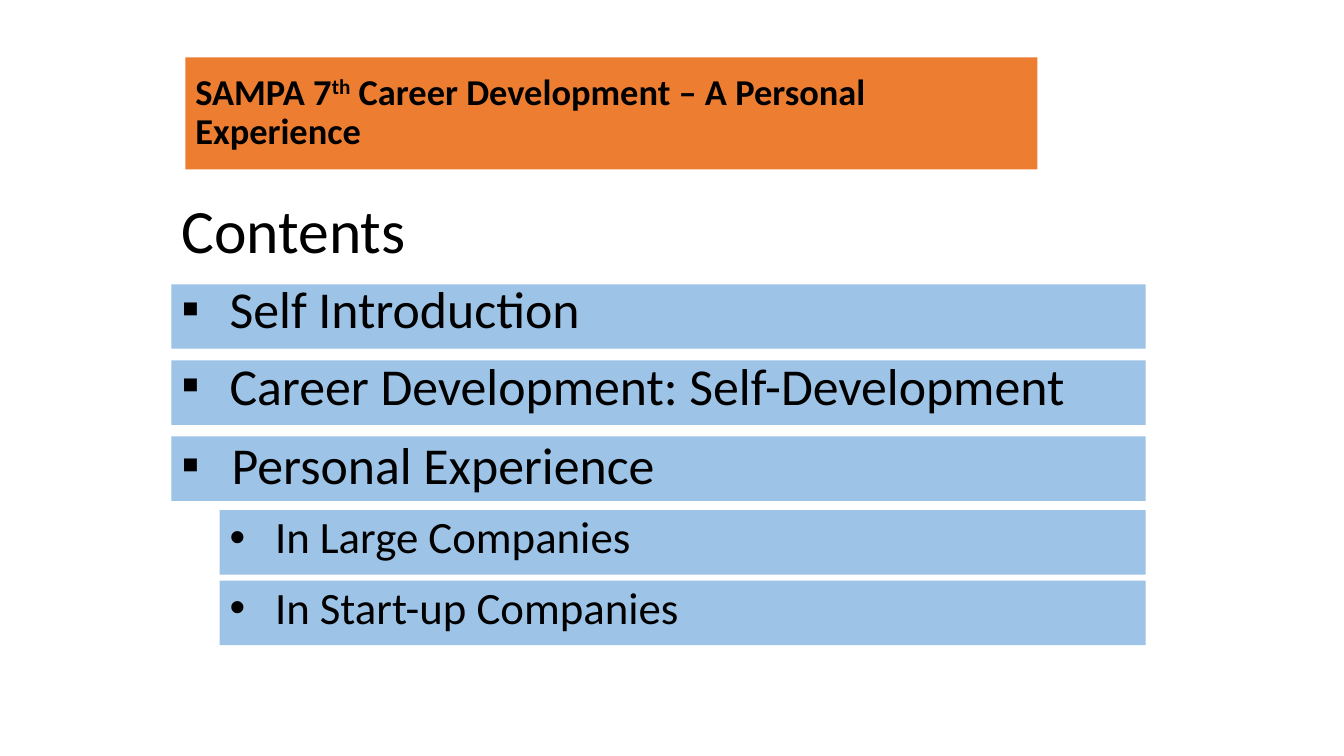
import pptx
import pptx.util
import pptx.dml.color
import pptx.enum.shapes
import pptx.enum.text
import pptx.oxml

RGBColor = pptx.dml.color.RGBColor
ANCHOR = pptx.enum.text.MSO_ANCHOR
ORANGE = RGBColor(0xED, 0x7D, 0x31)
BLUE = RGBColor(0x9D, 0xC3, 0xE6)
BLACK = RGBColor(0, 0, 0)


class Deck:
    """Style and current slide; lengths are columns and rows of a 100 x 100 grid."""
    font = "Calibri"

    def __init__(self):
        self.prs = pptx.Presentation()
        self.prs.slide_width = pptx.util.Inches(13.33)
        self.prs.slide_height = pptx.util.Inches(7.5)
        self.s = self.prs.slides.add_slide(self.prs.slide_layouts[6])

    def grid(self, x, y, w, h):
        col, row = self.prs.slide_width / 100, self.prs.slide_height / 100
        return [round(v) for v in (x * col, y * row, w * col, h * row)]

    def run(self, p, text, size, bold=False, raised=False):
        r = p.add_run()
        r.text = text
        r.font.name, r.font.size, r.font.bold = self.font, pptx.util.Pt(size), bold
        r.font.color.rgb = BLACK
        if raised:
            r.font._element.set("baseline", "30000")

    def box(self, x, y, w, h, fill, anchor):
        sp = self.s.shapes.add_shape(
            pptx.enum.shapes.MSO_SHAPE.RECTANGLE, *self.grid(x, y, w, h))
        sp.shadow.inherit = False
        sp.fill.solid()
        sp.fill.fore_color.rgb = fill
        sp.line.fill.background()
        tf = sp.text_frame
        tf.word_wrap = True
        tf.vertical_anchor = anchor
        p = tf.paragraphs[0]
        p.alignment = pptx.enum.text.PP_ALIGN.LEFT
        return tf, p

    def title(self, x, y, w, h, runs):
        tf, p = self.box(x, y, w, h, ORANGE, ANCHOR.MIDDLE)
        p.line_spacing = 0.9
        for text, raised in runs:
            self.run(p, text, 26, bold=True, raised=raised)

    def bar(self, x, y, right, text, size, bullet, spacing, indent, drop=0):
        tf, p = self.box(x, y, right - x, 8.53, BLUE, ANCHOR.TOP)
        tf.margin_top = pptx.util.Inches(0.05 + drop)
        p.line_spacing = spacing
        p.space_before = pptx.util.Pt(10)
        # Bullet with hanging indent
        pPr = p._p.get_or_add_pPr()
        pPr.set("marL", str(pptx.util.Inches(indent)))
        pPr.set("indent", str(-pptx.util.Inches(indent)))
        ns = pptx.oxml.ns.nsdecls("a")
        for tag in ('buFont %s typeface="Arial"' % ns, f'buChar {ns} char="{bullet}"'):
            pPr.append(pptx.oxml.parse_xml(f"<a:{tag}/>"))
        self.run(p, text, size)

    def heading(self, x, y, w, h, text):
        tf = self.s.shapes.add_textbox(*self.grid(x, y, w, h)).text_frame
        tf.word_wrap = False
        self.run(tf.paragraphs[0], text, 44)


def main():
    deck = Deck()
    right = 85.25

    # Title band
    deck.title(13.8, 7.6, 63.4, 14.8, [
        ("SAMPA 7", False), ("th", True),
        (" Career Development – A Personal Experience", False)])

    # Contents heading
    deck.heading(12.75, 24.67, 18.4, 11.2, "Contents")

    # Main topics
    topics = [("Self Introduction", 0.48, 0),
              ("Career Development: Self-Development", 0.48, 0),
              ("Personal Experience", 0.5, 0.03)]
    for i, (text, indent, drop) in enumerate(topics):
        deck.bar(12.75, 37.6 + 10.07 * i, right, text, 37, "▪", 0.8, indent, drop)

    # Sub-topics
    for i, text in enumerate(["In Large Companies", "In Start-up Companies"]):
        deck.bar(16.35, 67.47 + 9.33 * i, right, text, 32, "•", 0.9, 0.45)

    deck.prs.save("out.pptx")


if __name__ == "__main__":
    main()
